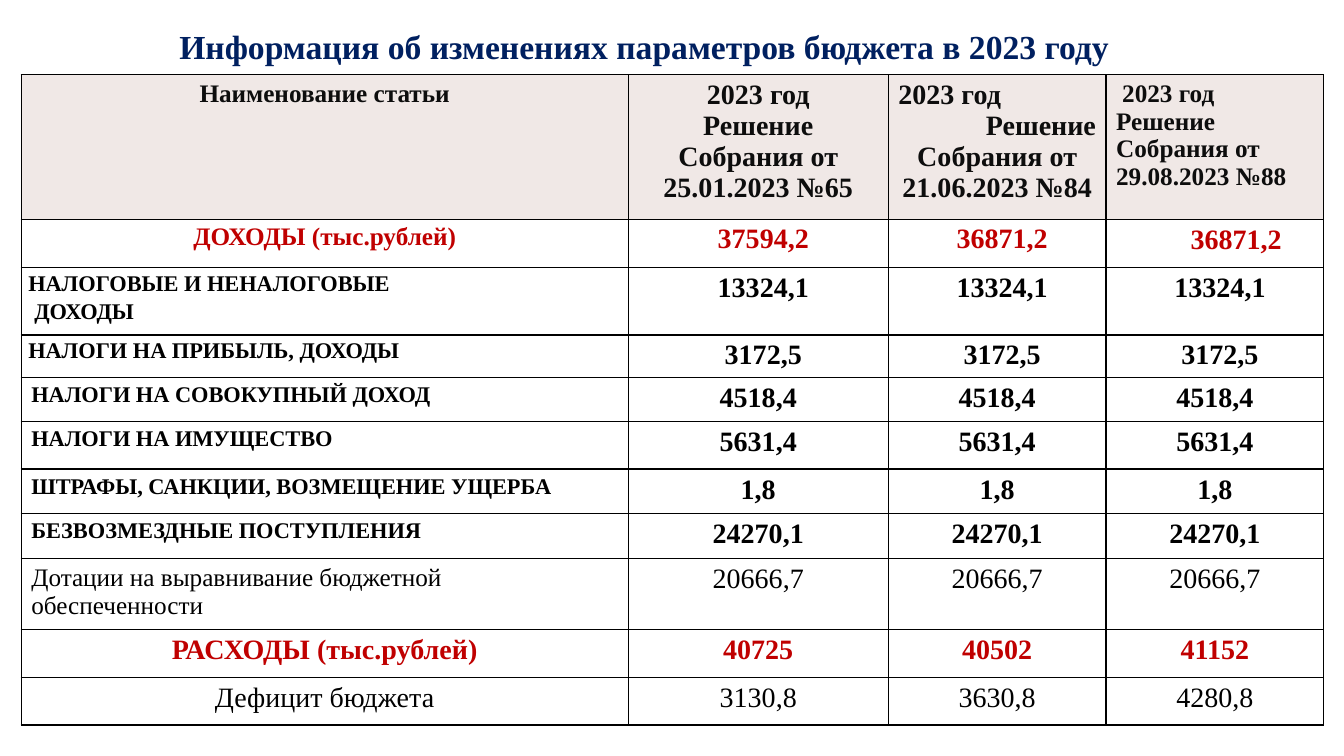
"""Build a slide with a table of changes to the 2023 budget."""
from lxml import etree
from pptx import Presentation, util as u
from pptx.dml import color
from pptx.enum import text
from pptx.oxml import ns

WIDTH, HEIGHT = 13.33, 7.5
COLS = [6.02, 2.58, 2.16, 2.16]
ROWS = [1.43, 0.48, 0.67, 0.42, 0.44, 0.47, 0.44, 0.45, 0.7, 0.48, 0.47]
ALIGN = {"l": text.PP_ALIGN.LEFT, "c": text.PP_ALIGN.CENTER, "r": text.PP_ALIGN.RIGHT}
BLACK, RED, NAVY, DARK = "000000", "C00000", "002060", "0D0D0D"
TIGHT = {"margin_left": 0.07, "margin_right": 0.07, "margin_top": 0, "margin_bottom": 0}

HEADERS = [
    (18, [("Наименование статьи", "c", 0)]),
    (20, [("2023 год", "c", 0), ("Решение Собрания от 25.01.2023 №65", "c", 0)]),
    (20, [("2023 год", "l", 0), ("Решение", "r", 0), ("Собрания от 21.06.2023 №84", "c", 0)]),
    (18, [("2023 год", "l", 0.06), ("Решение Собрания от 29.08.2023 №88", "l", 0)]),
]
TOTAL = {"size": 20, "bold": True, "color": RED, "align": "c"}
INCOME = {**TOTAL, "size": 18, "tight": True}
GROUP = {"size": 16, "bold": True, "color": BLACK, "align": "l"}
TAX = {**GROUP, "tight": True}
DETAIL = {**GROUP, "size": 18, "bold": False}
BALANCE = {**DETAIL, "size": 20, "align": "c"}
ITEMS = [
    (INCOME, ["ДОХОДЫ (тыс.рублей)"], ["37594,2", "36871,2", "36871,2"]),
    (TAX, ["НАЛОГОВЫЕ И НЕНАЛОГОВЫЕ", "ДОХОДЫ"], ["13324,1"] * 3),
    (TAX, ["НАЛОГИ НА ПРИБЫЛЬ, ДОХОДЫ"], ["3172,5"] * 3),
    (GROUP, ["НАЛОГИ НА СОВОКУПНЫЙ ДОХОД"], ["4518,4"] * 3),
    (GROUP, ["НАЛОГИ НА ИМУЩЕСТВО"], ["5631,4"] * 3),
    (GROUP, ["ШТРАФЫ, САНКЦИИ, ВОЗМЕЩЕНИЕ УЩЕРБА"], ["1,8"] * 3),
    (GROUP, ["БЕЗВОЗМЕЗДНЫЕ ПОСТУПЛЕНИЯ"], ["24270,1"] * 3),
    (DETAIL, ["Дотации на выравнивание бюджетной обеспеченности"], ["20666,7"] * 3),
    (TOTAL, ["РАСХОДЫ (тыс.рублей)"], ["40725", "40502", "41152"]),
    (BALANCE, ["Дефицит бюджета"], ["3130,8", "3630,8", "4280,8"]),
]


def rgb(value):
    """Turn a hex string into a colour."""
    return color.RGBColor.from_string(value)


def area(left, top, width, height):
    """Turn percentages of the slide into lengths."""
    return [u.Inches(share * side / 100) for share, side in
            zip((left, top, width, height), (WIDTH, HEIGHT) * 2)]


def write(tf, lines, size, bold, ink, spacing=1.0):
    """Fill a text frame with (text, alignment, indent) lines."""
    for i, (line, align, indent) in enumerate(lines):
        p = tf.paragraphs[0] if i == 0 else tf.add_paragraph()
        p.alignment, p.line_spacing = ALIGN[align], spacing
        if indent:
            p._p.get_or_add_pPr().set("marL", str(u.Inches(indent)))
        r = p.add_run()
        r.text = line
        for name, value in {"name": "Times New Roman", "size": u.Pt(size), "bold": bold}.items():
            setattr(r.font, name, value)
        r.font.color.rgb = rgb(ink)


def add_borders(cell):
    """Draw a thin black line on each side of a cell."""
    tcPr = cell._tc.get_or_add_tcPr()
    for i, side in enumerate(("a:lnL", "a:lnR", "a:lnT", "a:lnB")):
        ln = etree.Element(ns.qn(side), w=str(u.Pt(1)))
        fill = etree.SubElement(ln, ns.qn("a:solidFill"))
        etree.SubElement(fill, ns.qn("a:srgbClr"), val=BLACK)
        tcPr.insert(i, ln)


def fill_cell(cell, lines, size, bold, ink, back="FFFFFF", tight=False):
    """Give a cell its text, margins, fill and borders."""
    for name, value in (TIGHT if tight else {}).items():
        setattr(cell, name, u.Inches(value))
    cell.fill.solid()
    cell.fill.fore_color.rgb = rgb(back)
    add_borders(cell)
    write(cell.text_frame, lines, size, bold, ink, 1.15 if tight else 1.0)


def add_item(table, row, style, label, values):
    """Fill one budget row: its label, then its values."""
    size, bold, ink, align = (style[key] for key in ("size", "bold", "color", "align"))
    tight = style.get("tight", False)
    lines = [(line, align, 0.06 * i) for i, line in enumerate(label)]
    fill_cell(table.cell(row, 0), lines, size, bold, ink, tight=tight)
    for col, value in enumerate(values, 1):
        shifted = style is INCOME and col == len(values)
        indent = 0.42 if shifted else 0.1 if tight else 0
        fill_cell(table.cell(row, col), [(value, "c", indent)], 20, bold, ink,
                  tight=tight and not shifted)


def add_budget(s):
    """Add the budget table."""
    table = s.shapes.add_table(len(ROWS), len(COLS), *area(1.58, 9.87, 96.92, 86)).table
    for flag in ("first_row", "horz_banding"):
        setattr(table, flag, False)
    for column, width in zip(table.columns, COLS):
        column.width = u.Inches(width)
    for row, height in zip(table.rows, ROWS):
        row.height = u.Inches(height)
    for col, (size, lines) in enumerate(HEADERS):
        fill_cell(table.cell(0, col), lines, size, True, DARK, "F0E8E6")
    for row, item in enumerate(ITEMS, 1):
        add_item(table, row, *item)


def add_title(s, title):
    """Add the slide title."""
    tf = s.shapes.add_textbox(*area(12.6, 2.8, 82.67, 6.67)).text_frame
    tf.word_wrap = True
    write(tf, [(title, "l", 0)], 24, True, NAVY)


def main():
    """Build and save the slide."""
    prs = Presentation()
    prs.slide_width, prs.slide_height = u.Inches(WIDTH), u.Inches(HEIGHT)
    s = prs.slides.add_slide(prs.slide_layouts[6])
    add_title(s, "Информация об изменениях параметров бюджета в 2023 году")
    add_budget(s)
    prs.save("out.pptx")


if __name__ == "__main__":
    main()
